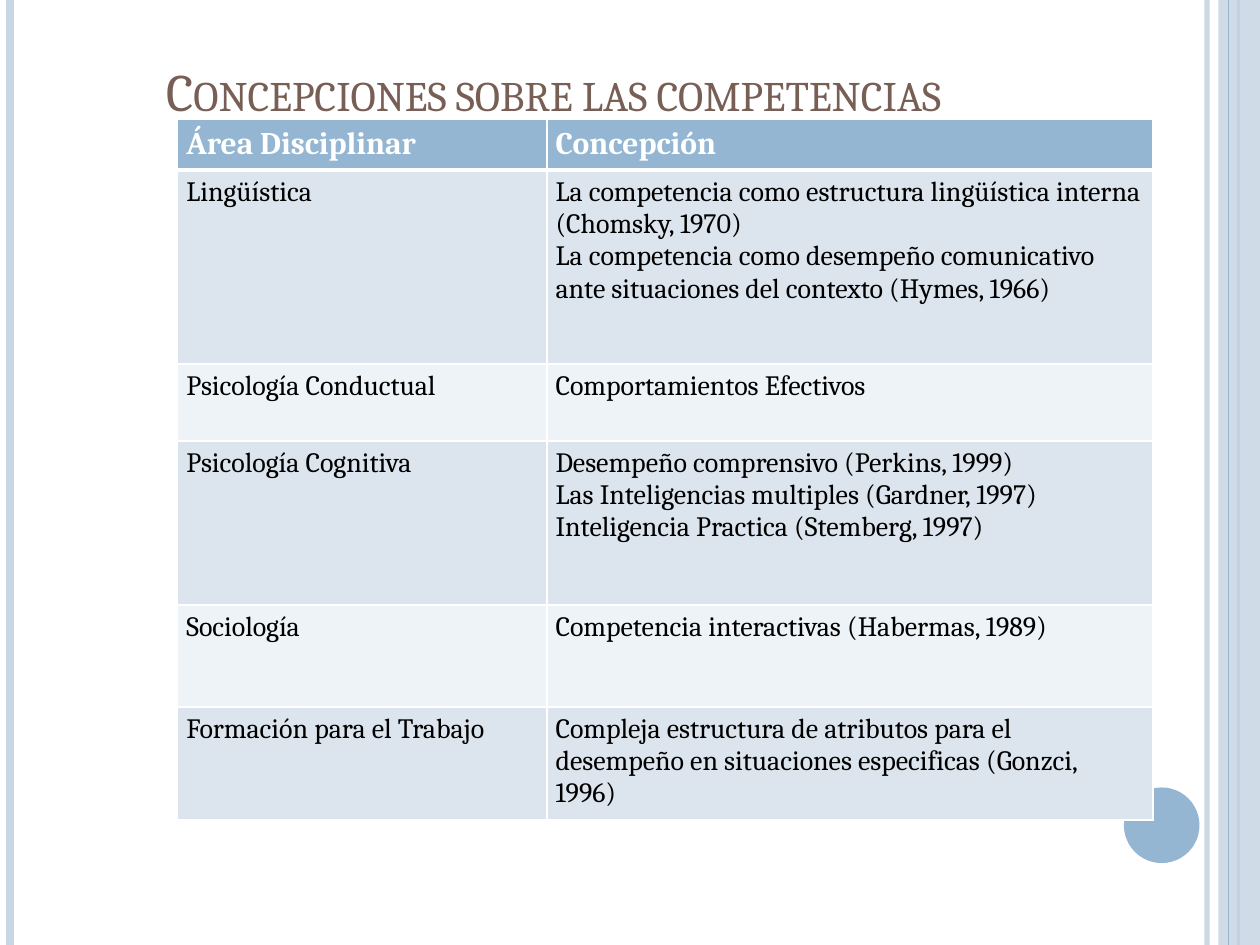
from lxml import etree
from pptx import Presentation
from pptx.dml.color import RGBColor
from pptx.enum import shapes, text
from pptx.oxml.ns import qn
from pptx.util import Inches, Pt

FONT = "Cambria"
BLUE, PALE_BLUE, BROWN = "94B6D2", "C8D7E5", "775F55"
WHITE, BLACK = "FFFFFF", "000000"
BANDS = ["DCE5EE", "EEF3F7"]

TITLE = "Concepciones sobre las competencias"
COLUMN_WIDTHS = [2.93, 4.81]
# Row height, discipline, conceptions
ROWS = [
    (0.37, "Área Disciplinar", ["Concepción"]),
    (1.54, "Lingüística", [
        "La competencia como estructura lingüística interna (Chomsky, 1970)",
        "La competencia como desempeño comunicativo ante situaciones del contexto (Hymes, 1966)"]),
    (0.61, "Psicología Conductual", ["Comportamientos Efectivos"]),
    (1.3, "Psicología Cognitiva", [
        "Desempeño comprensivo (Perkins, 1999)",
        "Las Inteligencias multiples (Gardner, 1997)",
        "Inteligencia Practica (Stemberg, 1997)"]),
    (0.81, "Sociología", ["Competencia interactivas (Habermas, 1989)"]),
    (0.86, "Formación para el Trabajo", [
        "Compleja estructura de atributos para el desempeño en situaciones especificas (Gonzci, 1996)"]),
]
# x, colour, width in points
BACK_STRIPES = [(9.58, PALE_BLUE, 3), (0.08, PALE_BLUE, 4.5), (9.83, BLUE, 1.5)]
FRONT_STRIPES = [(9.75, BLUE, 0.75)]


def rgb(value):
    return RGBColor.from_string(value)


def set_alpha(fill_parent, percent):
    color = next(fill_parent.iter(qn("a:srgbClr")))
    etree.SubElement(color, qn("a:alpha")).set("val", str(percent * 1000))


def add_stripes(slide, stripes):
    for x, color, width in stripes:
        stripe = slide.shapes.add_connector(
            shapes.MSO_CONNECTOR.STRAIGHT, Inches(x), 0, Inches(x), Inches(7.5))
        stripe.line.color.rgb = rgb(color)
        stripe.line.width = Pt(width)
        etree.SubElement(stripe._element.spPr, qn("a:effectLst"))
        if width == 3:
            set_alpha(stripe._element.spPr, 93)


def add_solid(slide, preset, box, color):
    solid = slide.shapes.add_shape(preset, *map(Inches, box))
    solid.shadow.inherit = False
    solid.fill.solid()
    solid.fill.fore_color.rgb = rgb(color)
    solid.line.fill.background()
    return solid


def style(paragraph, size, color, bold=False):
    font = paragraph.font
    font.name, font.size, font.bold = FONT, Pt(size), bold
    font.color.rgb = rgb(color)


def add_borders(cell, top, bottom):
    properties = cell._tc.get_or_add_tcPr()
    for side, width in (("L", 1), ("R", 1), ("T", top), ("B", bottom)):
        border = etree.SubElement(properties, qn(f"a:ln{side}"), w=str(Pt(width)))
        fill = etree.SubElement(border, qn("a:solidFill"))
        etree.SubElement(fill, qn("a:srgbClr"), val=WHITE)


def fill_cell(cell, lines, row):
    header = row == 0
    add_borders(cell, 3 if row == 1 else 1, 3 if header else 1)
    cell.fill.solid()
    cell.fill.fore_color.rgb = rgb(BLUE if header else BANDS[(row - 1) % 2])
    cell.margin_left = cell.margin_right = Inches(0.07)
    cell.margin_top = cell.margin_bottom = Inches(0.05)
    cell.text_frame.text = "\n".join(lines)
    for paragraph in cell.text_frame.paragraphs:
        style(paragraph, 18 if header else 16, WHITE if header else BLACK, header)


def add_title(slide):
    frame = slide.shapes.add_textbox(
        Inches(1.22), 0, Inches(8.22), Inches(1.02)).text_frame
    frame.word_wrap = True
    frame.vertical_anchor = text.MSO_ANCHOR.BOTTOM
    heading = frame.paragraphs[0]
    run = heading.add_run()
    run.text = TITLE
    run._r.get_or_add_rPr().set("cap", "small")
    style(heading, 30, BROWN)


def add_conceptions(slide):
    heights = [height for height, _, _ in ROWS]
    table = slide.shapes.add_table(
        len(ROWS), len(COLUMN_WIDTHS), Inches(1.41), Inches(0.95),
        Inches(sum(COLUMN_WIDTHS)), Inches(sum(heights))).table
    for column, width in zip(table.columns, COLUMN_WIDTHS):
        column.width = Inches(width)
    for i, (height, discipline, conceptions) in enumerate(ROWS):
        table.rows[i].height = Inches(height)
        fill_cell(table.cell(i, 0), [discipline], i)
        fill_cell(table.cell(i, 1), conceptions, i)


def main():
    deck = Presentation()
    deck.slide_width, deck.slide_height = Inches(10), Inches(7.5)
    slide = deck.slides.add_slide(deck.slide_layouts[6])
    add_stripes(slide, BACK_STRIPES)
    band = add_solid(slide, shapes.MSO_SHAPE.RECTANGLE, (9.67, 0, 0.33, 7.5), PALE_BLUE)
    set_alpha(band._element.spPr, 87)
    add_stripes(slide, FRONT_STRIPES)
    add_solid(slide, shapes.MSO_SHAPE.OVAL, (8.92, 6.25, 0.6, 0.6), BLUE)
    add_title(slide)
    add_conceptions(slide)
    deck.save("out.pptx")


if __name__ == "__main__":
    main()
